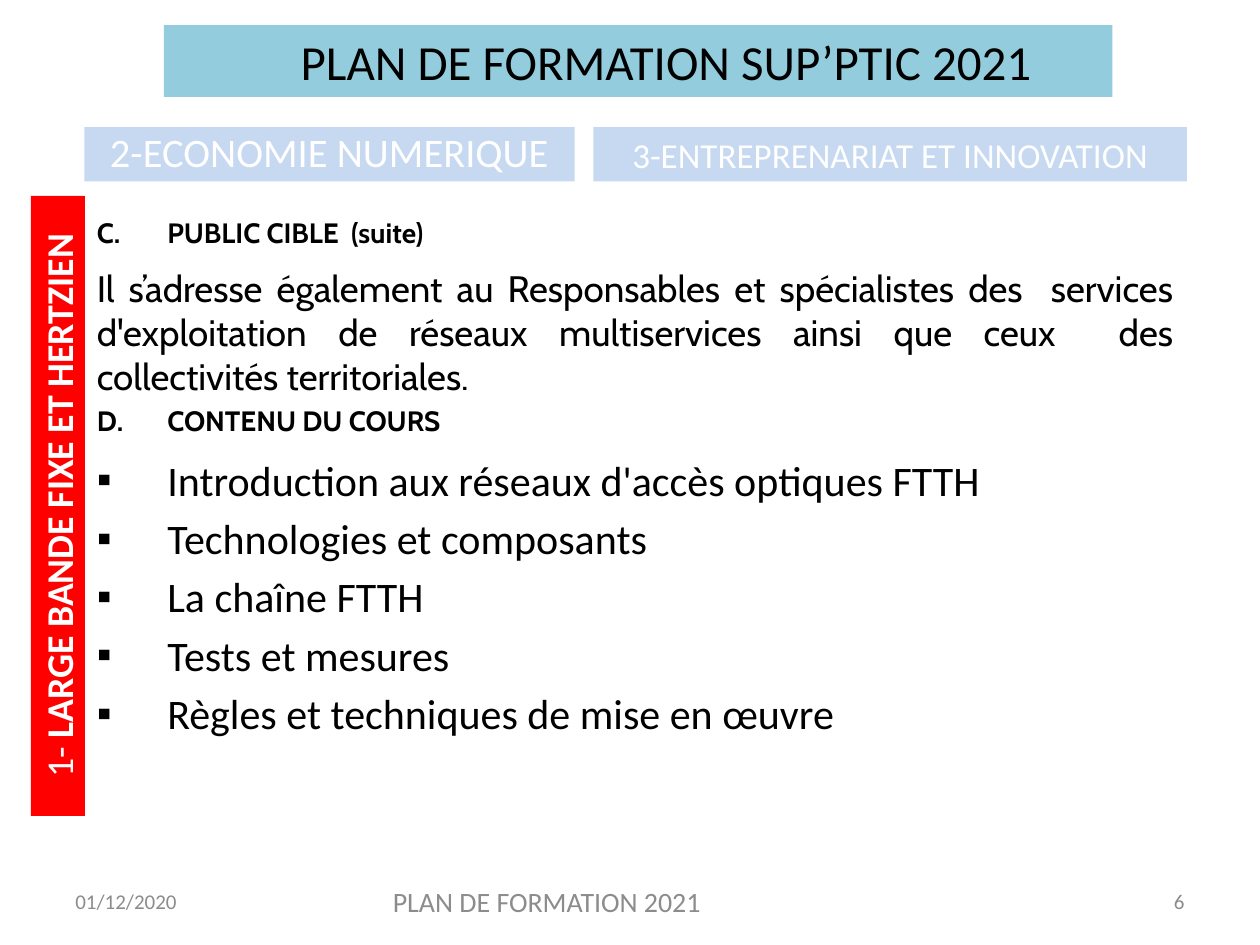
from lxml import etree
from pptx import Presentation
from pptx.dml.color import RGBColor
from pptx.enum.shapes import MSO_SHAPE
from pptx.enum.text import MSO_ANCHOR, PP_ALIGN
from pptx.oxml.ns import qn
from pptx.util import Inches, Pt

LEFT, MID, RIGHT, JUST = PP_ALIGN.LEFT, PP_ALIGN.CENTER, PP_ALIGN.RIGHT, PP_ALIGN.JUSTIFY
TOP, CENTER, BOTTOM = MSO_ANCHOR.TOP, MSO_ANCHOR.MIDDLE, MSO_ANCHOR.BOTTOM
RECT = MSO_SHAPE.RECTANGLE

RED = RGBColor(0xFF, 0x00, 0x00)
PALE = RGBColor(0xC6, 0xD9, 0xF1)
TEAL = RGBColor(0x93, 0xCD, 0xDD)
GREY = RGBColor(0x8C, 0x8C, 0x8C)
WHITE = RGBColor(0xFF, 0xFF, 0xFF)
BLACK = RGBColor(0x00, 0x00, 0x00)

TITLE = "PLAN DE FORMATION SUP’PTIC 2021"
SIDE = [("1- ", False), ("LARGE BANDE FIXE ET HERTZIEN", True)]
TABS = [
    ("2-ECONOMIE NUMERIQUE", 0.67, 3.89, 23.1),
    ("3-ENTREPRENARIAT ET INNOVATION", 4.71, 4.71, 20),
]
PUBLIC = "PUBLIC CIBLE  (suite)"
INTRO = ("Il s’adresse également au Responsables et spécialistes des  services "
         "d'exploitation de réseaux multiservices ainsi que ceux  des "
         "collectivités territoriales.")
COURSE = "CONTENU DU COURS"
TOPICS = [
    "Introduction aux réseaux d'accès optiques FTTH",
    "Technologies et composants",
    "La chaîne FTTH",
    "Tests et mesures",
    "Règles et techniques de mise en œuvre",
]
FOOTER = [
    ("01/12/2020", 0.5, 2.33, 12, LEFT),
    ("PLAN DE FORMATION 2021", 2.09, 4.5, 16, MID),
    ("6", 7.17, 2.33, 12, RIGHT),
]
HANG = Inches(0.56)


def mark(par, tag, **attrs):
    """Give a paragraph a hanging bullet or number."""
    props = par._p.get_or_add_pPr()
    props.set("marL", str(HANG))
    props.set("indent", str(-HANG))
    if tag == "a:buChar":
        etree.SubElement(props, qn("a:buFont"), typeface="Arial")
    etree.SubElement(props, qn(tag), **attrs)


def write(par, runs, size=12, color=BLACK, face="Calibri", bold=False,
          align=LEFT, before=0, after=0):
    """Fill a paragraph with a string or with (text, bold) pairs."""
    par.alignment = align
    par.space_before, par.space_after = Pt(before), Pt(after)
    for text, heavy in [(runs, bold)] if isinstance(runs, str) else runs:
        run = par.add_run()
        run.text = text
        font = run.font
        font.size, font.name, font.bold = Pt(size), face, heavy
        font.color.rgb = color


def frame(shape, anchor):
    text = shape.text_frame
    text.word_wrap = True
    text.vertical_anchor = anchor
    return text


def add_bar(slide, place, fill, anchor):
    bar = slide.shapes.add_shape(RECT, *map(Inches, place))
    bar.shadow.inherit = False
    bar.fill.solid()
    bar.fill.fore_color.rgb = fill
    bar.line.fill.background()
    return bar, frame(bar, anchor)


def add_text(slide, place, anchor):
    return frame(slide.shapes.add_textbox(*map(Inches, place)), anchor)


def add_body(slide):
    body = add_text(slide, (0.67, 1.66, 8.74, 4.81), TOP)
    head = dict(size=16, face="Cabin", bold=True, align=JUST, after=5.5)

    par = body.paragraphs[0]
    mark(par, "a:buAutoNum", type="alphaUcPeriod", startAt="3")
    write(par, PUBLIC, **head)

    write(body.add_paragraph(), INTRO, size=21, face="Cabin", align=JUST, before=4)

    par = body.add_paragraph()
    mark(par, "a:buAutoNum", type="alphaUcPeriod", startAt="4")
    write(par, COURSE, before=3, **head)

    for topic in TOPICS:
        par = body.add_paragraph()
        mark(par, "a:buChar", char="▪")
        write(par, topic, size=24, before=4.5)


def main():
    deck = Presentation()
    deck.slide_width, deck.slide_height = Inches(10), Inches(7.5)
    slide = deck.slides.add_slide(deck.slide_layouts[6])

    side, text = add_bar(slide, (-2, 3.8, 4.92, 0.43), RED, CENTER)
    side.rotation = 270
    write(text.paragraphs[0], SIDE, size=21.6, color=WHITE, align=MID)

    add_body(slide)

    for words, left, width, size, align in FOOTER:
        text = add_text(slide, (left, 6.95, width, 0.4), CENTER)
        write(text.paragraphs[0], words, size=size, color=GREY, align=align)

    for words, left, width, size in TABS:
        _, text = add_bar(slide, (left, 1.01, width, 0.43), PALE, BOTTOM)
        write(text.paragraphs[0], words, size=size, color=WHITE, align=MID)

    _, text = add_bar(slide, (1.3, 0.2, 7.53, 0.57), TEAL, TOP)
    text.margin_left = Inches(0.54)
    write(text.paragraphs[0], TITLE, size=28, align=MID)

    deck.save("out.pptx")


if __name__ == "__main__":
    main()
